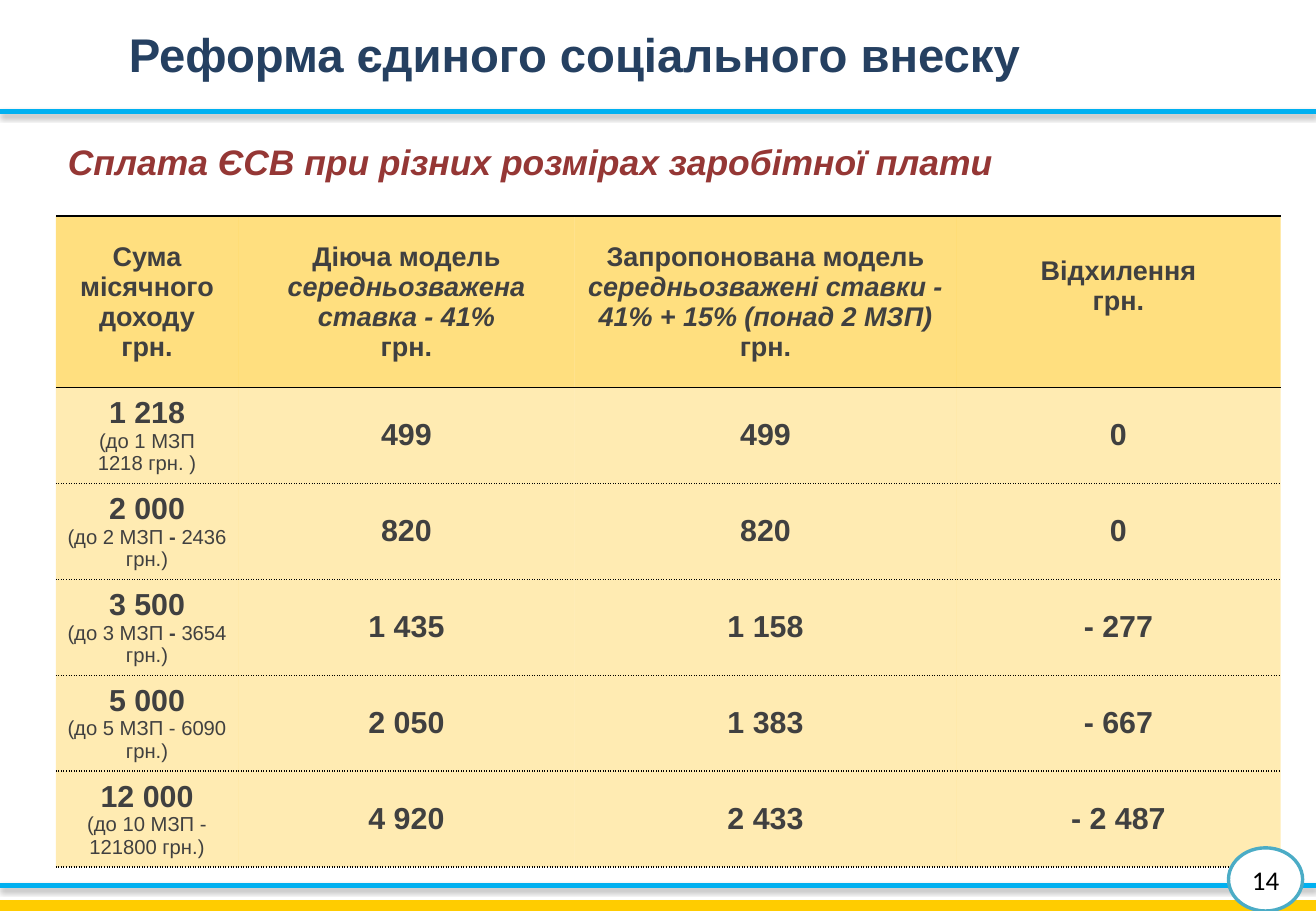
from dataclasses import dataclass

from lxml import etree
from pptx import Presentation
from pptx import util as u
from pptx.dml.color import RGBColor
from pptx.enum import shapes, text
from pptx.oxml import parse_xml
from pptx.oxml.ns import nsdecls, qn

COLORS = {
    "title": "254061", "subtitle": "953735", "body": "404040",
    "rule": "00B0F0", "band": "FFCC00", "gold": "FFC000",
    "badge": "4BACC6", "white": "FFFFFF", "black": "000000",
}
WIDTH, HEIGHT = 10.83, 7.5
COLUMN_WIDTHS = [1.5, 2.77, 3.14, 2.67]
HEADER_HEIGHT, ROW_HEIGHT = 1.41, 0.79
HEADER_ALPHA, BODY_ALPHA = 50, 30


@dataclass
class Line:
    """One paragraph; a part between bars switches bold."""
    words: str
    size: float = 16
    bold: bool = True
    italic: bool = False
    color: str = "body"
    font: str = "Arial"
    gap: float = 0


def rgb(name):
    return RGBColor.from_string(COLORS[name])


class SlideBuilder:
    def __init__(self, presentation):
        self.slide = presentation.slides.add_slide(presentation.slide_layouts[5])

    def set_lines(self, frame, lines, align=text.PP_ALIGN.CENTER):
        for index, line in enumerate(lines):
            paragraph = frame.add_paragraph() if index else frame.paragraphs[0]
            paragraph.alignment = align
            paragraph.space_before = paragraph.space_after = u.Pt(line.gap)
            for part, words in enumerate(line.words.split("|")):
                run = paragraph.add_run()
                run.text = words
                run.font.name, run.font.size = line.font, u.Pt(line.size)
                run.font.bold = line.bold != bool(part % 2)
                run.font.italic = line.italic
                run.font.color.rgb = rgb(line.color)

    def heading(self, shape, left, top, width, height, line):
        shape.left, shape.top = u.Inches(left), u.Inches(top)
        shape.width, shape.height = u.Inches(width), u.Inches(height)
        frame = shape.text_frame
        frame.word_wrap = True
        frame.auto_size = text.MSO_AUTO_SIZE.NONE
        frame.vertical_anchor = text.MSO_ANCHOR.TOP
        frame.margin_top = u.Inches(0.08)
        self.set_lines(frame, [line], text.PP_ALIGN.LEFT)

    def title(self, *box, line):
        self.heading(self.slide.shapes.title, *box, line)

    def subtitle(self, *box, line):
        lengths = [u.Inches(value) for value in box]
        self.heading(self.slide.shapes.add_textbox(*lengths), *box, line)

    def rule(self, top):
        """Full-width blue line with a soft shadow below."""
        connector = self.slide.shapes.add_connector(
            shapes.MSO_CONNECTOR.STRAIGHT, 0, u.Inches(top),
            u.Inches(WIDTH), u.Inches(top))
        connector.line.color.rgb = rgb("rule")
        connector.line.width = u.Pt(3)
        connector._element.spPr.append(parse_xml(
            f'<a:effectLst {nsdecls("a")}><a:outerShdw blurRad="{u.Pt(3.1)}" '
            f'dist="{u.Pt(1.8)}" dir="5400000" rotWithShape="0">'
            f'<a:srgbClr val="{COLORS["black"]}"><a:alpha val="35000"/></a:srgbClr>'
            '</a:outerShdw></a:effectLst>'))

    def shape(self, kind, left, top, width, height, fill, outline=None, lines=()):
        shape = self.slide.shapes.add_shape(
            kind, u.Inches(left), u.Inches(top), u.Inches(width), u.Inches(height))
        shape.shadow.inherit = False
        shape.fill.solid()
        shape.fill.fore_color.rgb = rgb(fill)
        if outline:
            shape.line.color.rgb = rgb(outline)
            shape.line.width = u.Pt(2)
        else:
            shape.line.fill.background()
        frame = shape.text_frame
        frame.margin_left = frame.margin_right = 0
        frame.margin_top = frame.margin_bottom = 0
        frame.vertical_anchor = text.MSO_ANCHOR.MIDDLE
        self.set_lines(frame, lines)

    def style_cell(self, cell, alpha, top_dash, bottom_dash):
        cell.vertical_anchor = text.MSO_ANCHOR.MIDDLE
        cell.margin_left = cell.margin_right = u.Inches(0.07)
        cell.fill.solid()
        cell.fill.fore_color.rgb = rgb("gold")
        properties = cell._tc.get_or_add_tcPr()
        color = properties.find(".//" + qn("a:srgbClr"))
        etree.SubElement(color, qn("a:alpha"), val=str(alpha * 1000))
        # Borders come before the fill, in the order left, right, top, bottom
        borders = [("lnL", None), ("lnR", None), ("lnT", top_dash), ("lnB", bottom_dash)]
        for index, (tag, dash) in enumerate(borders):
            paint = "<a:noFill/>"
            if dash:
                paint = (f'<a:solidFill><a:srgbClr val="{COLORS["black"]}"/></a:solidFill>'
                         f'<a:prstDash val="{dash}"/>')
            properties.insert(index, parse_xml(
                f'<a:{tag} {nsdecls("a")} w="{u.Pt(1)}">{paint}</a:{tag}>'))

    def table(self, left, top, rows):
        heights = [HEADER_HEIGHT] + [ROW_HEIGHT] * (len(rows) - 1)
        table = self.slide.shapes.add_table(
            len(rows), len(COLUMN_WIDTHS), u.Inches(left), u.Inches(top),
            u.Inches(sum(COLUMN_WIDTHS)), u.Inches(sum(heights))).table
        table.first_row = table.horz_banding = False
        for column, width in zip(table.columns, COLUMN_WIDTHS):
            column.width = u.Inches(width)
        for index, (row, height) in enumerate(zip(rows, heights)):
            table.rows[index].height = u.Inches(height)
            for column, lines in enumerate(row):
                cell = table.cell(index, column)
                self.style_cell(cell, BODY_ALPHA if index else HEADER_ALPHA,
                                "sysDot" if index > 1 else "solid",
                                "sysDot" if index else "solid")
                self.set_lines(cell.text_frame, lines)
        return table


HEADER = [
    [Line("Сума місячного доходу"), Line("грн.")],
    [Line("Діюча модель"), Line("середньозважена ставка - 41%", italic=True), Line("грн.")],
    [Line("Запропонована модель"),
     Line("середньозважені ставки - 41% + 15% (понад 2 МЗП)", italic=True), Line("грн.")],
    [Line("Відхилення"), Line("грн.")],
]
# Income, its notes, current model, proposed model, difference
INCOMES = [
    ("1 218", ["(до 1 МЗП", "1218 грн. )"], "499", "499", "0"),
    ("2 000", ["(до 2 МЗП |- |2436 грн.)"], "820", "820", "0"),
    ("3 500", ["(до 3 МЗП |- |3654 грн.)"], "1 435", "1 158", "- 277"),
    ("5 000", ["(до 5 МЗП - 6090 грн.)"], "2 050", "1 383", "- 667"),
    ("12 000", ["(до 10 МЗП - 121800 грн.)"], "4 920", "2 433", "- 2 487"),
]


def main():
    presentation = Presentation()
    presentation.slide_width = u.Inches(WIDTH)
    presentation.slide_height = u.Inches(HEIGHT)
    builder = SlideBuilder(presentation)

    # Headings
    builder.title(0.96, 0.13, 9.73, 0.71,
                  line=Line("Реформа єдиного соціального внеску", 28, color="title"))
    builder.rule(0.92)
    builder.subtitle(0.46, 1.07, 9.73, 0.47,
                     line=Line("Сплата ЄСВ при різних розмірах заробітної плати", 21,
                               italic=True, color="subtitle"))

    # Contribution table
    rows = [HEADER]
    for income, notes, *values in INCOMES:
        first = [Line(income, 18)] + [Line(note, 12, bold=False) for note in notes]
        rows.append([first] + [[Line(value, 18, gap=3)] for value in values])
    table = builder.table(0.46, 1.78, rows)
    table.cell(0, 3).margin_bottom = u.Inches(0.3)

    # Footer
    builder.shape(shapes.MSO_SHAPE.RECTANGLE, 0, 7.41, WIDTH, 0.09, "band")
    builder.rule(7.29)
    builder.shape(shapes.MSO_SHAPE.OVAL, 10.11, 6.98, 0.61, 0.52, "white", "badge",
                  [Line("14", 16, bold=False, color="black", font="Calibri")])
    presentation.save("out.pptx")


if __name__ == "__main__":
    main()
